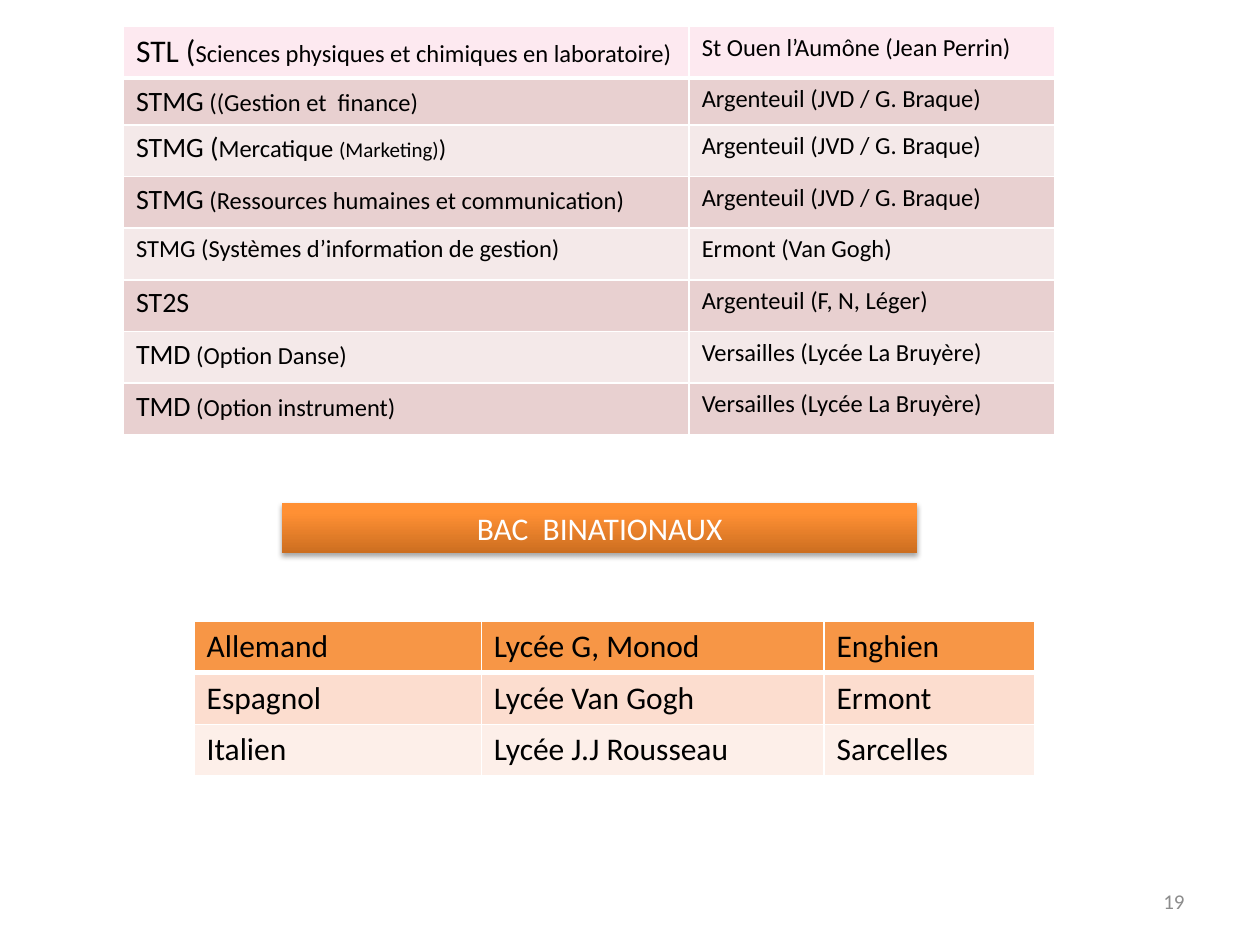
from lxml import etree
from pptx import Presentation
from pptx.dml.color import RGBColor
from pptx.enum.shapes import MSO_SHAPE as Shape
from pptx.enum.text import MSO_ANCHOR as Anchor, PP_ALIGN as Align
from pptx.oxml import parse_xml
from pptx.oxml.ns import nsdecls, qn
from pptx.util import Inches, Pt

FONT = "Calibri"
ROSE, ROSE_DARK, ROSE_LIGHT = "FDE9F0", "E8D0D0", "F4E9E9"
ORANGE, ORANGE_MID, ORANGE_LIGHT = "F79646", "FCDDCF", "FDEFE9"

ARGENTEUIL = "Argenteuil (JVD / G. Braque)"
VERSAILLES = "Versailles (Lycée La Bruyère)"
TECHNOLOGY_ROWS = [
    [[("STL (", 18), ("Sciences physiques et chimiques en laboratoire)", 14)],
     [("St Ouen l’Aumône (Jean Perrin)", 14)]],
    [[("STMG", 16), (" ((Gestion et  finance)", 14)], [(ARGENTEUIL, 14)]],
    [[("STMG (", 16), ("Mercatique ", 14), ("(Marketing)", 12), (")", 14)],
     [(ARGENTEUIL, 14)]],
    [[("STMG", 16), (" (Ressources humaines et communication)", 14)],
     [(ARGENTEUIL, 14)]],
    [[("STMG (Systèmes d’information de gestion)", 14)],
     [("Ermont (Van Gogh)", 14)]],
    [[("ST2S", 16)], [("Argenteuil (F, N, Léger)", 14)]],
    [[("TMD", 16), (" (Option Danse)", 14)], [(VERSAILLES, 14)]],
    [[("TMD", 16), (" (Option instrument)", 14)], [(VERSAILLES, 14)]],
]
BINATIONAL_ROWS = [
    [[(name, 18)] for name in row]
    for row in (
        ("Allemand", "Lycée G, Monod", "Enghien"),
        ("Espagnol", "Lycée Van Gogh", "Ermont"),
        ("Italien", "Lycée J.J Rousseau", "Sarcelles"),
    )
]


def color(value):
    """Turn a hex string into a colour."""
    return RGBColor.from_string(value)


def write(paragraph, runs, text_color="000000", align=Align.LEFT):
    """Fill a paragraph with (text, size) runs."""
    paragraph.alignment = align
    paragraph.font.name = FONT
    paragraph.font.color.rgb = color(text_color)
    sizes = {size for _, size in runs}
    if len(sizes) == 1:
        paragraph.font.size = Pt(sizes.pop())
    for text, size in runs:
        run = paragraph.add_run()
        run.text = text
        if paragraph.font.size is None:
            run.font.size = Pt(size)


def set_borders(cell, top, bottom):
    """Give a cell white borders, with top and bottom widths in points."""
    properties = cell._tc.get_or_add_tcPr()
    for side, width in (("L", 1), ("R", 1), ("T", top), ("B", bottom)):
        line = etree.SubElement(properties, qn(f"a:ln{side}"), w=str(Pt(width)))
        fill = etree.SubElement(line, qn("a:solidFill"))
        etree.SubElement(fill, qn("a:srgbClr"), val="FFFFFF")


def add_table(slide, left, top, widths, heights, rows, header, bands):
    """Add a table with a header fill and alternating band fills."""
    frame = slide.shapes.add_table(
        len(rows), len(widths), Inches(left), Inches(top),
        Inches(sum(widths)), Inches(sum(heights)))
    table = frame.table
    table.first_row = table.horz_banding = False
    for column, width in zip(table.columns, widths):
        column.width = Inches(width)
    for index, (row, height) in enumerate(zip(rows, heights)):
        table.rows[index].height = Inches(height)
        fill = bands[(index - 1) % 2] if index else header
        for position, runs in enumerate(row):
            cell = table.cell(index, position)
            set_borders(cell, 3 if index == 1 else 1, 3 if index == 0 else 1)
            cell.fill.solid()
            cell.fill.fore_color.rgb = color(fill)
            write(cell.text_frame.paragraphs[0], runs)


def add_banner(slide, left, top, width, height, text, stops):
    """Add a title bar with an upward gradient and a soft shadow."""
    banner = slide.shapes.add_shape(
        Shape.RECTANGLE, Inches(left), Inches(top), Inches(width), Inches(height))
    banner.line.fill.background()
    stop_xml = "".join(
        f'<a:gs pos="{position * 1000}"><a:srgbClr val="{value}"/></a:gs>'
        for position, value in stops)
    properties = banner._element.spPr
    properties.find(qn("a:ln")).addprevious(parse_xml(
        f'<a:gradFill {nsdecls("a")} rotWithShape="1"><a:gsLst>{stop_xml}</a:gsLst>'
        '<a:lin ang="16200000" scaled="0"/></a:gradFill>'))
    properties.append(parse_xml(
        f'<a:effectLst {nsdecls("a")}><a:outerShdw blurRad="{Pt(3.1)}" '
        f'dist="{Pt(1.8)}" dir="5400000" rotWithShape="0"><a:srgbClr val="000000">'
        '<a:alpha val="35000"/></a:srgbClr></a:outerShdw></a:effectLst>'))
    banner.text_frame.word_wrap = True
    banner.text_frame.vertical_anchor = Anchor.TOP
    write(banner.text_frame.paragraphs[0], [(text, 18)], "FFFFFF", Align.CENTER)


def add_page_number(slide, left, top, width, height, number):
    """Add the grey page number."""
    box = slide.shapes.add_textbox(
        Inches(left), Inches(top), Inches(width), Inches(height))
    box.text_frame.word_wrap = True
    box.text_frame.vertical_anchor = Anchor.MIDDLE
    write(box.text_frame.paragraphs[0], [(number, 12)], "8C8C8C", Align.RIGHT)


def main():
    """Build the slide and save it."""
    presentation = Presentation()
    presentation.slide_width, presentation.slide_height = Inches(10), Inches(7.5)
    slide = presentation.slides.add_slide(presentation.slide_layouts[6])
    add_table(slide, 0.98, 0.21, [4.49, 2.9], [0.41, 0.34] + [0.41] * 6,
              TECHNOLOGY_ROWS, ROSE, (ROSE_DARK, ROSE_LIGHT))
    add_banner(slide, 2.24, 3.99, 5.04, 0.4, "BAC  BINATIONAUX",
               [(0, "CC6E20"), (80, "FF9034"), (100, "FF9136")])
    add_table(slide, 1.54, 4.93, [2.28, 2.72, 1.67], [0.41] * 3,
              BINATIONAL_ROWS, ORANGE, (ORANGE_MID, ORANGE_LIGHT))
    add_page_number(slide, 7.17, 6.95, 2.33, 0.4, "19")
    presentation.save("out.pptx")


if __name__ == "__main__":
    main()
